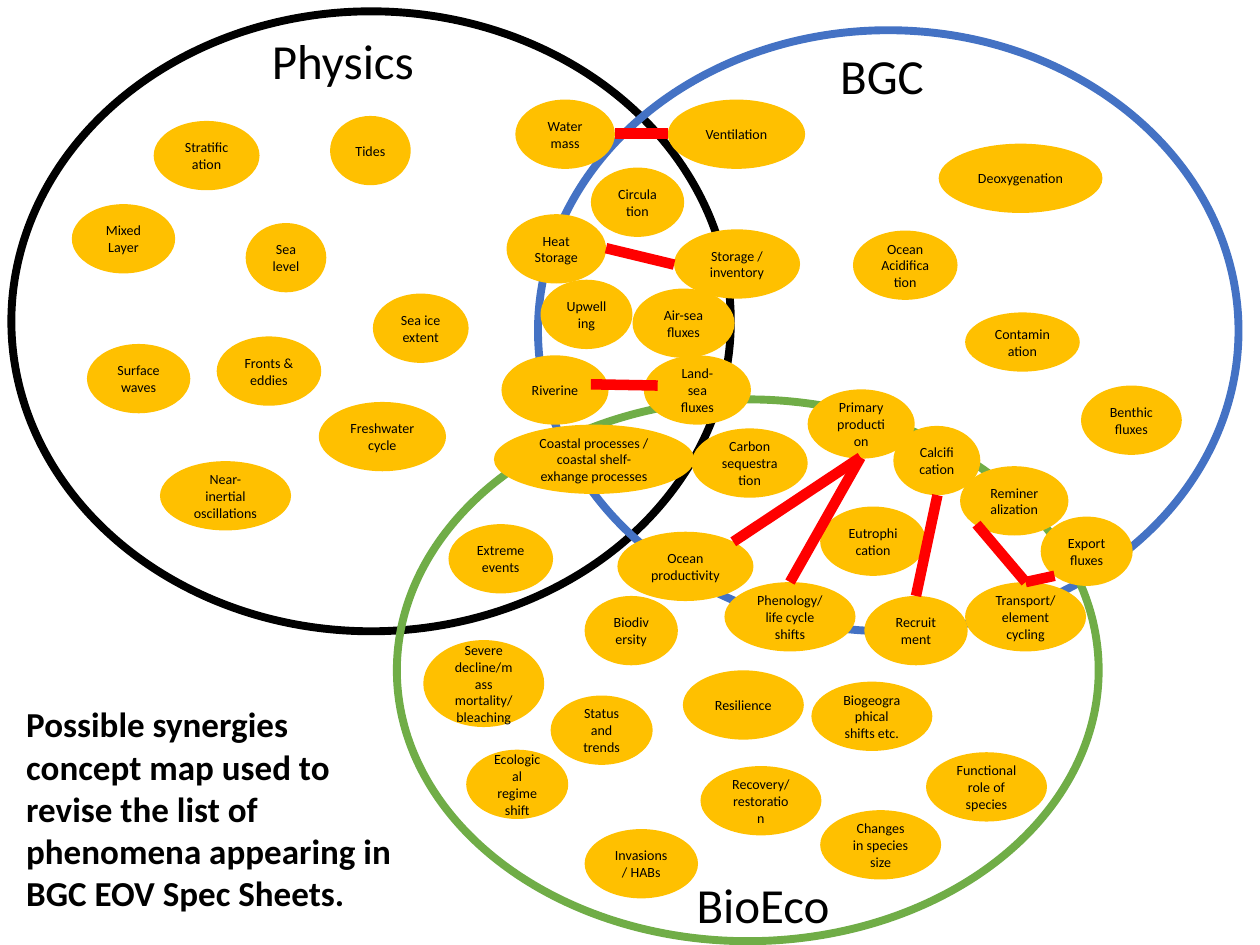
from pptx import Presentation
from pptx.dml.color import RGBColor as Rgb
from pptx.enum.shapes import MSO_CONNECTOR as Conn, MSO_SHAPE as Shape
from pptx.enum.text import MSO_ANCHOR as Anchor, MSO_AUTO_SIZE as Auto, PP_ALIGN as Align
from pptx.oxml.ns import qn
from pptx.util import Inches, Pt
from lxml.etree import SubElement

COLORS = {"black": "000000", "blue": "4472C4", "green": "70AD47", "gold": "FFC000", "red": "FF0000"}


def tint(name):
    return Rgb.from_string(COLORS[name])


def write(frame, text, size, bold=False):
    frame.word_wrap = True
    run = frame.paragraphs[0].add_run()
    run.text = text
    run.font.name = "Calibri"
    run.font.size = Pt(size)
    run.font.bold = bold
    run.font.color.rgb = tint("black")


deck = Presentation()
deck.slide_width, deck.slide_height = Inches(10), Inches(7.5)
shapes = deck.slides.add_slide(deck.slide_layouts[6]).shapes

rings = [
    ("black", 0.09, 0.09, 5.71, 4.92),
    ("blue", 4.27, 0.24, 5.56, 4.77),
    ("green", 3.15, 3.17, 5.57, 4.3),
]
for color, *box in rings:
    ring = shapes.add_shape(Shape.OVAL, *map(Inches, box))
    ring.shadow.inherit = False
    ring.fill.background()
    ring.line.color.rgb = tint(color)
    ring.line.width = Pt(4.5)

HIGH = 0.55
topics = [
    ("Extreme events", 3.56, 4.16, 0.83, HIGH),
    ("Status and trends", 4.37, 5.52, 0.81, HIGH),
    ("Export fluxes", 8.26, 4.1, 0.73, HIGH),
    ("Eutrophication", 6.51, 4.02, 0.84, HIGH),
    ("Ocean productivity", 4.9, 4.22, 1.08, HIGH),
    ("Benthic fluxes", 8.58, 3.06, 0.8, HIGH),
    ("Water mass", 4.09, 0.79, 0.79, HIGH),
    ("Air-sea fluxes", 5.02, 2.29, 0.81, HIGH),
    ("Heat Storage", 4.02, 1.7, 0.79, HIGH),
    ("Riverine", 3.98, 2.82, 0.85, HIGH),
    ("Coastal processes / coastal shelf-exhange processes", 3.92, 3.37, 1.59, HIGH),
    ("Contamination", 7.66, 2.48, 0.91, 0.47),
    ("Ocean Acidification", 6.77, 1.83, 0.83, HIGH),
    ("Deoxygenation", 7.45, 1.14, 1.3, HIGH),
    ("Circulation", 4.69, 1.33, 0.74, HIGH),
    ("Stratification", 1.22, 0.96, 0.84, HIGH),
    ("Resilience", 5.42, 5.32, 0.96, HIGH),
    ("Recruitment", 6.86, 4.73, 0.82, HIGH),
    ("Phenology/life cycle shifts", 5.75, 4.62, 1.04, HIGH),
    ("Biodiversity", 4.64, 4.73, 0.74, HIGH),
    ("Invasions / HABs", 4.64, 6.58, 0.9, HIGH),
    ("Severe decline/mass mortality/bleaching", 3.36, 5.08, 0.96, 0.69),
    ("Sea level", 1.95, 1.77, 0.64, HIGH),
    ("Sea ice extent", 2.96, 2.33, 0.76, HIGH),
    ("Tides", 2.62, 0.92, 0.64, HIGH),
    ("Fronts & eddies", 1.72, 2.67, 0.83, HIGH),
    ("Upwelling", 4.29, 2.22, 0.73, HIGH),
    ("Surface waves", 0.69, 2.73, 0.82, HIGH),
    ("Remineralization", 7.62, 3.7, 0.86, HIGH),
    ("Calcification", 7.09, 3.38, 0.69, HIGH),
    ("Near-inertial oscillations", 1.27, 3.66, 1.04, HIGH),
    ("Ventilation", 5.3, 0.79, 1.09, HIGH),
    ("Freshwater cycle", 2.53, 3.19, 1.01, HIGH),
    ("Storage / inventory", 5.35, 1.82, 1, HIGH),
    ("Land-sea fluxes", 5.11, 2.82, 0.85, HIGH),
    ("Mixed Layer", 0.57, 1.62, 0.82, HIGH),
    ("Primary production", 6.41, 3.09, 0.85, HIGH),
    ("Biogeographical shifts etc.", 6.44, 5.41, 0.96, HIGH),
    ("Recovery/restoration", 5.56, 6.08, 0.96, HIGH),
    ("Functional role of species", 7.35, 5.97, 0.96, HIGH),
    ("Changes in species size", 6.51, 6.43, 0.96, HIGH),
    ("Ecological regime shift", 3.7, 5.95, 0.81, HIGH),
    ("Transport/element cycling", 7.66, 4.62, 0.96, HIGH),
    ("Carbon sequestration", 5.49, 3.4, 0.92, HIGH),
]
for text, *box in topics:
    oval = shapes.add_shape(Shape.OVAL, *map(Inches, box))
    oval.shadow.inherit = False
    oval.fill.solid()
    oval.fill.fore_color.rgb = tint("gold")
    oval.line.fill.background()
    frame = oval.text_frame
    frame.vertical_anchor = Anchor.MIDDLE
    frame.paragraphs[0].alignment = Align.CENTER
    write(frame, text, 8)

labels = [
    ("Physics", 28, False, 2.06, 0.19, 1.57, 0.57),
    ("BGC", 28, False, 6.57, 0.31, 1.73, 0.57),
    ("BioEco", 28, False, 5.43, 6.89, 1.57, 0.57),
    ("Possible synergies concept map used to revise the list of phenomena appearing in BGC EOV Spec Sheets.",
     20, True, 0.11, 5.53, 3.1, 1.78),
]
for text, size, bold, *box in labels:
    frame = shapes.add_textbox(*map(Inches, box)).text_frame
    write(frame, text, size, bold)
    frame.auto_size = Auto.SHAPE_TO_FIT_TEXT

links = [
    (5.3, 1.06, 4.88, 1.06),
    (5.35, 2.1, 4.81, 1.97),
    (5.22, 3.06, 4.69, 3.05),
    (6.83, 3.63, 5.82, 4.3),
    (6.83, 3.63, 6.27, 4.62),
    (7.44, 3.93, 7.27, 4.73),
    (7.75, 4.16, 8.14, 4.62),
    (8.37, 4.57, 8.14, 4.62),
]
for ends in links:
    link = shapes.add_connector(Conn.STRAIGHT, *map(Inches, ends))
    link.line.color.rgb = tint("red")
    link.line.width = Pt(6)
    SubElement(link._element.spPr, qn("a:effectLst"))

deck.save("out.pptx")
